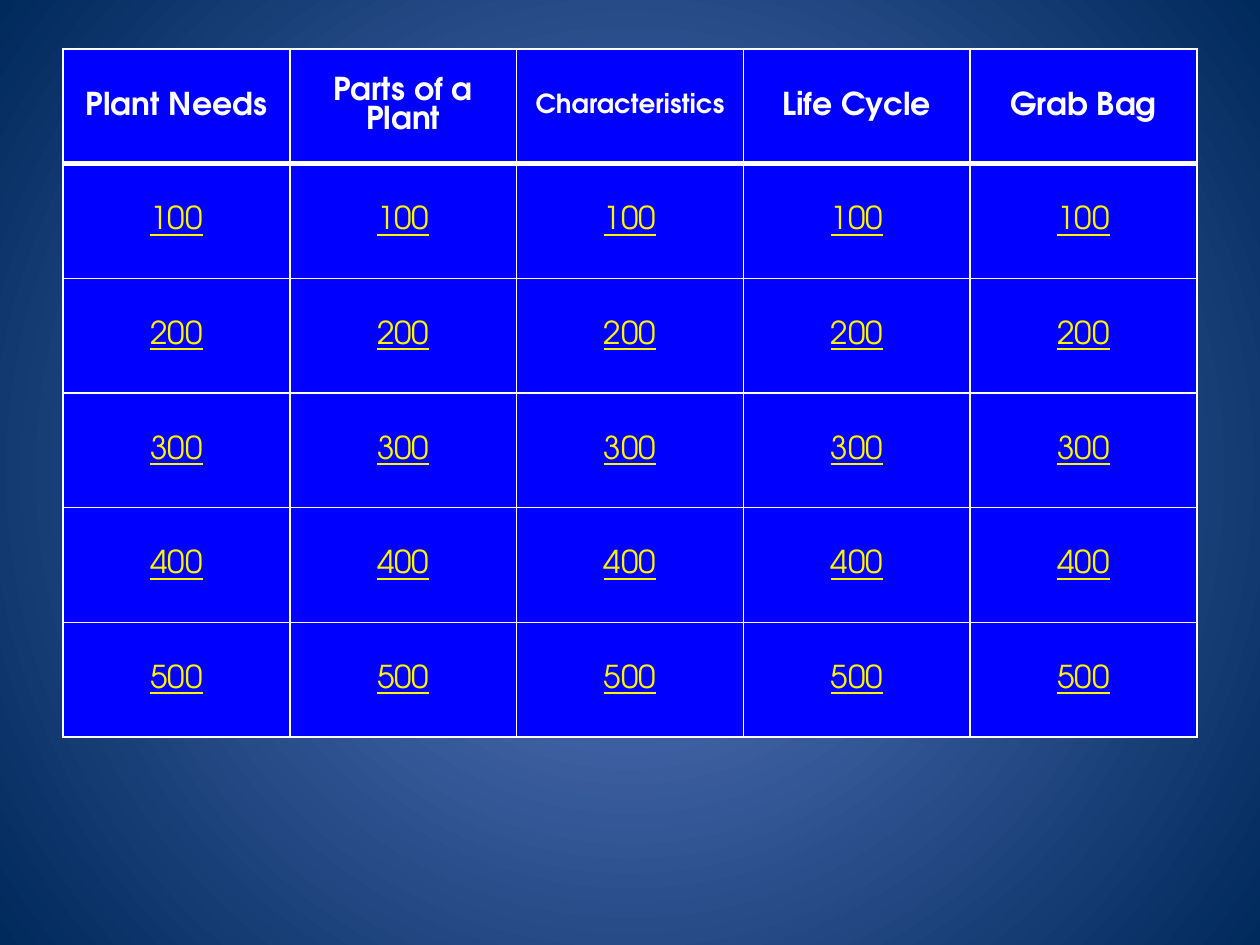
import pptx
import pptx.dml.color
import pptx.enum.text
import pptx.oxml
import pptx.oxml.ns
import pptx.util

PX = 9144  # 100 px to the inch

WHITE = pptx.dml.color.RGBColor(0xFF, 0xFF, 0xFF)
YELLOW = pptx.dml.color.RGBColor(0xFF, 0xF5, 0x00)
BLUE = pptx.dml.color.RGBColor(0x00, 0x00, 0xFF)
GLOW = pptx.dml.color.RGBColor(0x5E, 0x7C, 0xC5)
NAVY = pptx.dml.color.RGBColor(0x00, 0x29, 0x5C)

FONT = "TeX Gyre Adventor"
CATEGORIES = ["Plant Needs", "Parts of a Plant", "Characteristics", "Life Cycle", "Grab Bag"]
SMALL_CATEGORY = "Characteristics"
POINTS = [100, 200, 300, 400, 500]
COLUMN_WIDTH, ROW_HEIGHT = 180, 91


def px(length):
    return pptx.util.Emu(length * PX)


def paint_background(page):
    """Fill the page with a gradient that spreads from its centre."""
    fill = page.background.fill
    fill.gradient()
    for stop, color in zip(fill.gradient_stops, (GLOW, NAVY)):
        stop.color.rgb = color
    linear = page.element.find(".//" + pptx.oxml.ns.qn("a:lin"))
    circle = pptx.oxml.parse_xml(
        f'<a:path {pptx.oxml.ns.nsdecls("a")} path="circle">'
        '<a:fillToRect l="50000" t="50000" r="50000" b="50000"/></a:path>'
    )
    linear.getparent().replace(linear, circle)


def set_borders(cell, top, bottom):
    """Draw white borders: 1 pt at the sides, the given points above and below."""
    properties = cell._tc.get_or_add_tcPr()
    for side, points in (("L", 1), ("R", 1), ("T", top), ("B", bottom)):
        properties.append(pptx.oxml.parse_xml(
            f'<a:ln{side} {pptx.oxml.ns.nsdecls("a")} w="{pptx.util.Pt(points)}">'
            f'<a:solidFill><a:srgbClr val="{WHITE}"/></a:solidFill></a:ln{side}>'
        ))


def fill_cell(cell, text, color, size=18, heading=False, top=1, bottom=1):
    set_borders(cell, top, bottom)
    cell.fill.solid()
    cell.fill.fore_color.rgb = BLUE
    cell.vertical_anchor = pptx.enum.text.MSO_ANCHOR.MIDDLE
    cell.text = text
    para = cell.text_frame.paragraphs[0]
    para.alignment = pptx.enum.text.PP_ALIGN.CENTER
    font = para.runs[0].font
    font.name = FONT
    font.size = pptx.util.Pt(size)
    font.bold = heading
    font.underline = not heading
    font.color.rgb = color


def add_board(page):
    rows, columns = len(POINTS) + 1, len(CATEGORIES)
    frame = page.shapes.add_table(
        rows, columns, px(50), px(39), px(columns * COLUMN_WIDTH), px(rows * ROW_HEIGHT)
    )
    board = frame.table
    for column, category in enumerate(CATEGORIES):
        size = 15 if category == SMALL_CATEGORY else 18
        fill_cell(board.cell(0, column), category, WHITE, size, heading=True, bottom=3)
        for row, points in enumerate(POINTS, start=1):
            fill_cell(board.cell(row, column), str(points), YELLOW, top=3 if row == 1 else 1)


def main():
    deck = pptx.Presentation()
    deck.slide_width, deck.slide_height = px(1000), px(750)
    page = deck.slides.add_slide(deck.slide_layouts.get_by_name("Blank"))
    paint_background(page)
    add_board(page)
    deck.save("out.pptx")


if __name__ == "__main__":
    main()
